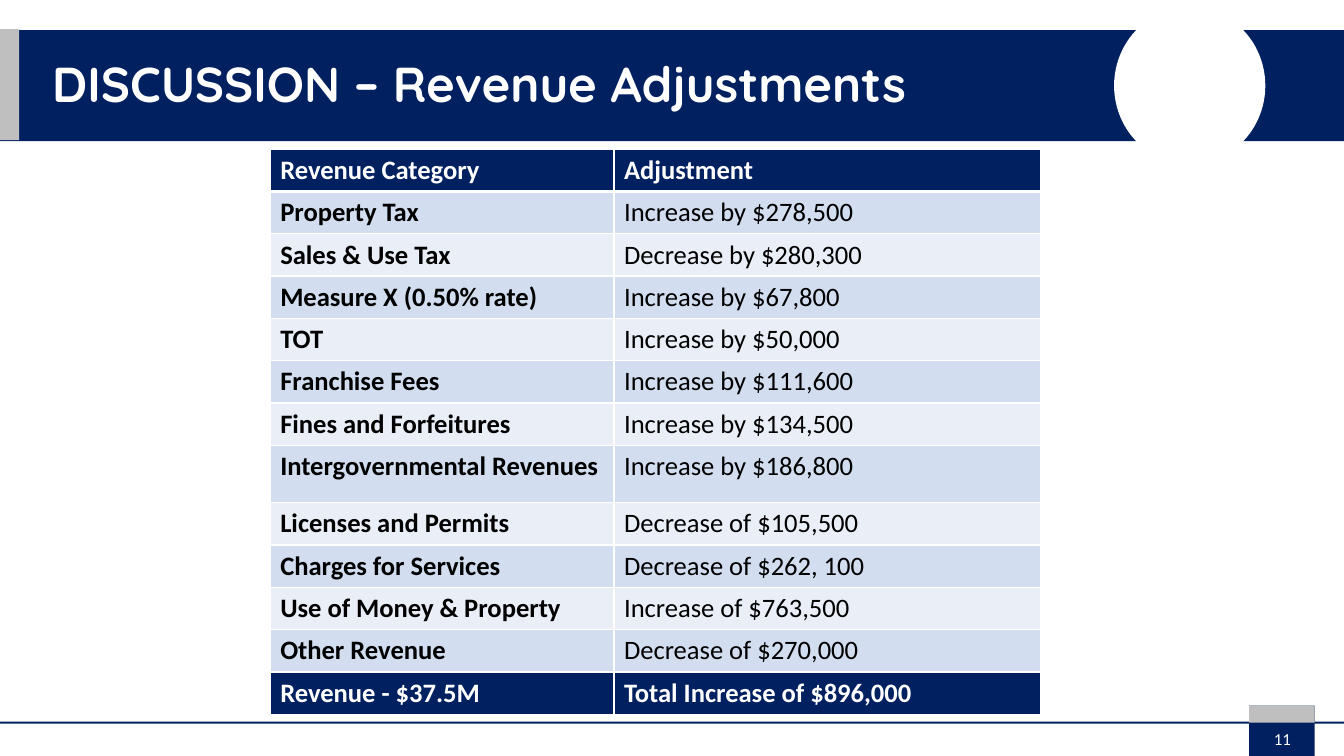
import pptx
import pptx.util
import pptx.dml.color
import pptx.enum.shapes
import pptx.enum.text
import pptx.oxml.ns
import lxml.etree

Inches = pptx.util.Inches
Pt = pptx.util.Pt
RGBColor = pptx.dml.color.RGBColor
Kind = pptx.enum.shapes.MSO_SHAPE
Align = pptx.enum.text.PP_ALIGN
Anchor = pptx.enum.text.MSO_ANCHOR

NAVY = RGBColor(0x00, 0x20, 0x60)
GRAY = RGBColor(0xBF, 0xBF, 0xBF)
WHITE = RGBColor(0xFF, 0xFF, 0xFF)
BLACK = RGBColor(0x00, 0x00, 0x00)
BANDS = [RGBColor(0xEA, 0xEF, 0xF7), RGBColor(0xD2, 0xDE, 0xEF)]

ROWS = [
    ("Revenue Category", "Adjustment"),
    ("Property Tax", "Increase by $278,500"),
    ("Sales & Use Tax", "Decrease by $280,300"),
    ("Measure X (0.50% rate)", "Increase by $67,800"),
    ("TOT", "Increase by $50,000"),
    ("Franchise Fees", "Increase by $111,600"),
    ("Fines and Forfeitures", "Increase by $134,500"),
    ("Intergovernmental Revenues", "Increase by $186,800"),
    ("Licenses and Permits", "Decrease of $105,500"),
    ("Charges for Services", "Decrease of $262, 100"),
    ("Use of Money & Property", "Increase of $763,500"),
    ("Other Revenue", "Decrease of $270,000"),
    ("Revenue - $37.5M", "Total Increase of $896,000"),
]
TALL = 7


class Deck:
    """Holds the style and the current slide, and draws each kind of element."""

    def __init__(self, prs):
        self.slide = prs.slides.add_slide(prs.slide_layouts[6])
        self.head = "Quicksand"
        self.body = "Calibri"

    def shape(self, kind, box, color):
        item = self.slide.shapes.add_shape(kind, *map(Inches, box))
        item.shadow.inherit = False
        item.fill.solid()
        item.fill.fore_color.rgb = color
        item.line.fill.background()

    def style(self, para, font, size, color, bold):
        for run in para.runs:
            run.font.name = font
            run.font.size = Pt(size)
            run.font.color.rgb = color
            run.font.bold = bold

    def text(self, words, box, font, size, bold=False, align=Align.LEFT, lead=1.0):
        frame = self.slide.shapes.add_textbox(*map(Inches, box)).text_frame
        frame.word_wrap = True
        frame.vertical_anchor = Anchor.MIDDLE
        frame.text = words
        para = frame.paragraphs[0]
        para.alignment = align
        para.line_spacing = lead
        self.style(para, font, size, WHITE, bold)

    def border(self, cell, side, width):
        qn = pptx.oxml.ns.qn
        props = cell._tc.get_or_add_tcPr()
        line = lxml.etree.SubElement(props, qn("a:ln" + side), w=str(Pt(width)))
        fill = lxml.etree.SubElement(line, qn("a:solidFill"))
        lxml.etree.SubElement(fill, qn("a:srgbClr"), val=str(WHITE))

    def table(self, rows, box, widths, tall):
        last = len(rows) - 1
        grid = self.slide.shapes.add_table(
            len(rows), len(widths), *map(Inches, box)).table
        for col, width in zip(grid.columns, widths):
            col.width = Inches(width)
        for r, row in enumerate(rows):
            grid.rows[r].height = Inches(0.57 if r == tall else 0.42)
            strong = r in (0, last)
            for c, words in enumerate(row):
                cell = grid.cell(r, c)
                for side in "LRTB":
                    thick = (r, side) in ((0, "B"), (1, "T"))
                    self.border(cell, side, 3 if thick else 1)
                cell.fill.solid()
                cell.fill.fore_color.rgb = NAVY if strong else BANDS[r % 2]
                cell.text_frame.text = words
                self.style(cell.text_frame.paragraphs[0], self.body, 19,
                           WHITE if strong else BLACK, strong or c == 0)


def main():
    prs = pptx.Presentation()
    prs.slide_width = Inches(13.33)
    prs.slide_height = Inches(7.5)
    deck = Deck(prs)
    deck.shape(Kind.RECTANGLE, (0, 0.3, 13.33, 1.1), NAVY)
    deck.shape(Kind.OVAL, (11.05, 0.07, 1.5, 1.56), WHITE)
    deck.shape(Kind.RECTANGLE, (0, 0.29, 0.19, 1.1), GRAY)
    deck.shape(Kind.RECTANGLE, (0, 7.16, 13.33, 0.02), NAVY)
    deck.shape(Kind.RECTANGLE, (12.39, 7, 0.65, 0.5), NAVY)
    deck.shape(Kind.RECTANGLE, (12.39, 7, 0.65, 0.17), GRAY)
    deck.text("DISCUSSION – Revenue Adjustments", (0.42, 0.4, 10.43, 0.91),
              deck.head, 35, bold=True, lead=0.9)
    deck.text("11", (12.27, 7.13, 0.9, 0.4), deck.body, 12, align=Align.CENTER)
    deck.table(ROWS, (2.68, 1.48, 7.64, 5.57), (3.41, 4.23), TALL)
    prs.save("out.pptx")


if __name__ == "__main__":
    main()
